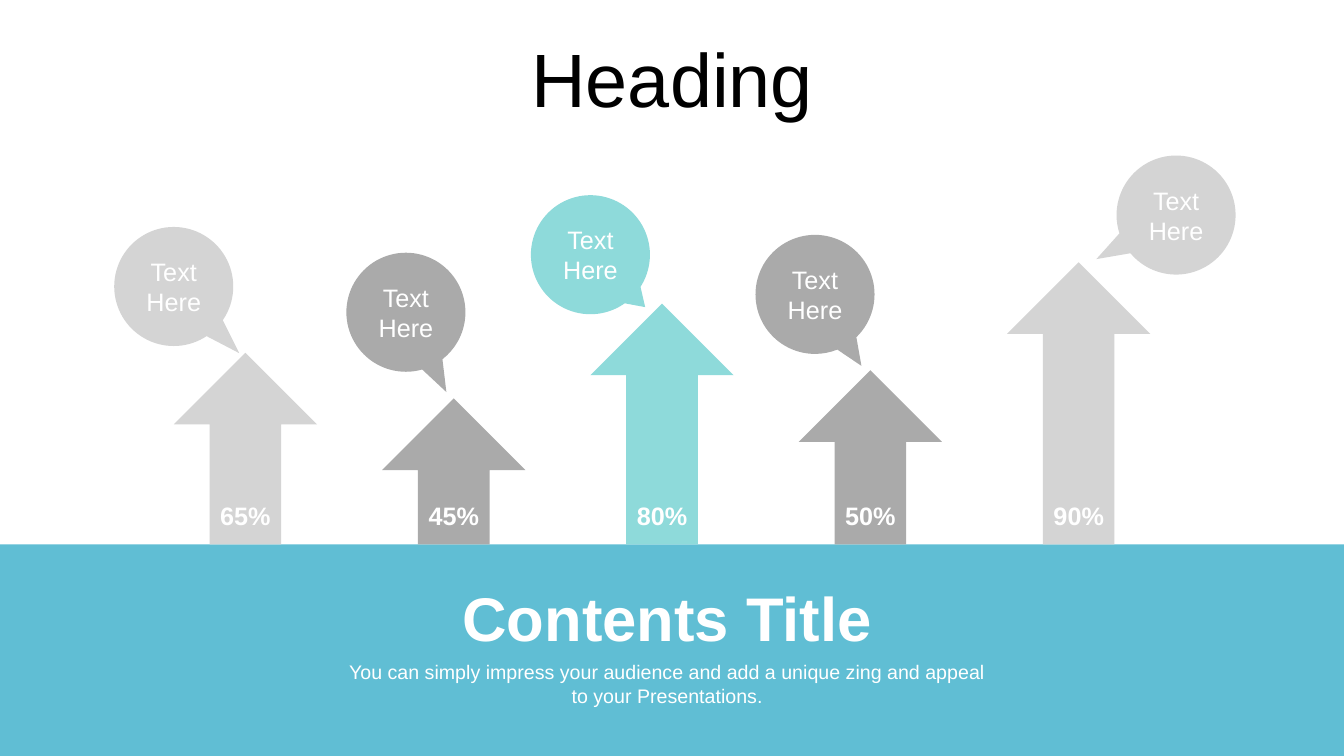
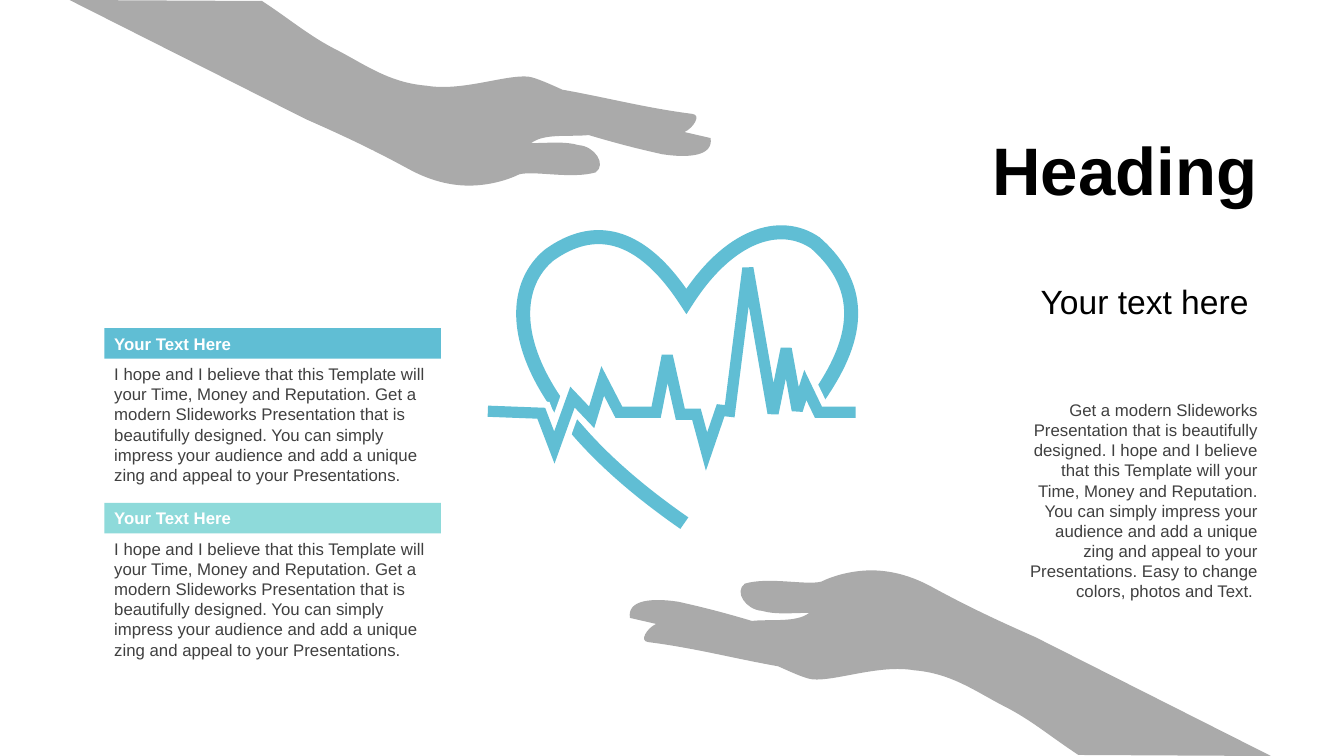
from dataclasses import dataclass

from lxml import etree
from pptx import Presentation
from pptx.dml.color import RGBColor
from pptx.enum.shapes import MSO_SHAPE
from pptx.enum.text import MSO_ANCHOR, PP_ALIGN
from pptx.oxml.ns import qn
from pptx.util import Cm, Pt

RECTANGLE = MSO_SHAPE.RECTANGLE
UP_ARROW = MSO_SHAPE.UP_ARROW
CALLOUT = MSO_SHAPE.OVAL_CALLOUT
LEFT, CENTER, RIGHT = PP_ALIGN.LEFT, PP_ALIGN.CENTER, PP_ALIGN.RIGHT
TOP, MIDDLE = MSO_ANCHOR.TOP, MSO_ANCHOR.MIDDLE


@dataclass(frozen=True)
class Theme:
    font: str = "Arial"
    blue: str = "60BED4"
    mint: str = "8EDADA"
    gray: str = "AAAAAA"
    silver: str = "D4D4D4"
    white: str = "FFFFFF"
    black: str = "000000"
    body: str = "404040"
    title_size: float = 54
    side_title_size: float = 48
    band_title_size: float = 44
    subtitle_size: float = 24
    label_size: float = 18
    caption_size: float = 14
    body_size: float = 12


THEME = Theme()
SLIDE_WIDTH, SLIDE_HEIGHT = 33.87, 19.05

# Content of the arrow slide; lengths in cm
BAND_TITLE = "Contents Title"
BAND_TEXT = ("You can simply impress your audience and add a unique zing "
             "and appeal to your Presentations.")
CALLOUT_TEXT = "Text Here"
# value, colour, arrow height, callout left and top, callout tip
ARROWS = [
    ("65%", THEME.silver, 4.83, (2.88, 5.72), (0.55, 0.56)),
    ("45%", THEME.gray, 3.68, (8.73, 6.37), (0.34, 0.67)),
    ("80%", THEME.mint, 6.07, (13.38, 4.92), (0.46, 0.44)),
    ("50%", THEME.gray, 4.39, (19.04, 5.92), (0.39, 0.6)),
    ("90%", THEME.silver, 7.11, (28.14, 3.92), (-0.67, 0.37)),
]

# Content of the heart slide
CARD_TITLE = "Your Text Here"
CARD_TEXT = ("I hope and I believe that this Template will your Time, Money and "
             "Reputation. Get a modern Slideworks Presentation that is "
             "beautifully designed. You can simply impress your audience and "
             "add a unique zing and appeal to your Presentations.")
CARD_COLORS = [THEME.blue, THEME.mint]
SIDE_TEXT = ("Get a modern Slideworks Presentation that is beautifully designed. "
             "I hope and I believe that this Template will your Time, Money and "
             "Reputation. You can simply impress your audience and add a unique "
             "zing and appeal to your Presentations. Easy to change colors, "
             "photos and Text. ")

# Outlines on a fine grid: two numbers are a line end, six a Bézier curve
GRID = 0.0254
GRID_WIDTH, GRID_HEIGHT = 1330, 750
CURVE_STEPS = 16
HEART = [
    (679, 519),
    (506, 399, 495, 294, 545, 253),
    (588, 222, 635, 228, 681, 299),
    (723, 233, 774, 217, 809, 241),
    (869, 294, 843, 353, 804, 405),
]
PULSE = [
    (484, 408), (537, 410), (550, 444), (568, 394), (587, 414), (598, 378),
    (614, 409), (651, 409), (662, 353), (675, 411), (691, 411), (701, 448),
    (715, 407), (724, 408), (742, 266), (767, 410), (780, 346), (791, 407),
    (799, 382), (812, 409), (849, 409),
]
HAND = [
    (859, 566),
    (878, 565, 900, 569, 924, 582),
    (957, 600, 984, 613, 1027, 632),
    (1261, 750),
    (1070, 749),
    (1041, 730, 1023, 714, 995, 700),
    (968, 686, 944, 668, 907, 665),
    (872, 659, 829, 676, 806, 674),
    (798, 673, 781, 665, 772, 661),
    (727, 653, 690, 643, 643, 637),
    (634, 636, 642, 623, 651, 619),
    (625, 613),
    (622, 595, 647, 593, 673, 597),
    (700, 603, 719, 608, 746, 616),
    (765, 614, 790, 618, 803, 608),
    (787, 608, 769, 610, 756, 606),
    (740, 605, 728, 587, 739, 579),
    (763, 572, 800, 581, 815, 577),
    (825, 572, 841, 567, 859, 566),
]


# Text and shapes
def write(shape, text, size, color, bold=False, align=LEFT, anchor=TOP,
          insets=(0.25, 0.25)):
    frame = shape.text_frame
    frame.word_wrap = True
    frame.vertical_anchor = anchor
    frame.margin_left, frame.margin_right = (Cm(inset) for inset in insets)
    frame.margin_top = frame.margin_bottom = Cm(0.13)
    paragraph = frame.paragraphs[0]
    paragraph.alignment = align
    run = paragraph.add_run()
    run.text = text
    run.font.name = THEME.font
    run.font.size = Pt(size)
    run.font.bold = bold
    run.font.color.rgb = RGBColor.from_string(color)
    return paragraph


def add_text(slide, box, text, size, color, **style):
    shape = slide.shapes.add_textbox(*(Cm(length) for length in box))
    return write(shape, text, size, color, **style)


def paint(shape, color):
    shape.shadow.inherit = False
    shape.fill.solid()
    shape.fill.fore_color.rgb = RGBColor.from_string(color)
    shape.line.fill.background()


def add_filled(slide, kind, box, color):
    shape = slide.shapes.add_shape(kind, *(Cm(length) for length in box))
    paint(shape, color)
    return shape


# Outlines
def curve_points(start, curve):
    """Sample a cubic curve, to find how far it reaches."""
    controls = [start, curve[:2], curve[2:4], curve[4:]]
    points = []
    for step in range(1, CURVE_STEPS + 1):
        t = step / CURVE_STEPS
        weights = ((1 - t) ** 3, 3 * t * (1 - t) ** 2, 3 * t ** 2 * (1 - t), t ** 3)
        points.append(tuple(
            sum(weight * control[axis] for weight, control in zip(weights, controls))
            for axis in (0, 1)))
    return points


def add_outline(slide, segments, close):
    """Build a freeform, then merge the samples of each curve into one Bézier."""
    parts = [segments[:1]]
    for before, segment in zip(segments, segments[1:]):
        is_curve = len(segment) == 6
        parts.append(curve_points(before[-2:], segment) if is_curve else [segment])
    start, *rest = [(Cm(x * GRID), Cm(y * GRID)) for part in parts for x, y in part]
    builder = slide.shapes.build_freeform(*start)
    builder.add_line_segments(rest, close=close)
    shape = builder.convert_to_shape()

    lines = iter(list(shape._element.iter(qn("a:lnTo"))))
    for segment, part in zip(segments[1:], parts[1:]):
        first, *others = [next(lines) for _ in part]
        if not others:
            continue
        for line in others:
            line.getparent().remove(line)
        curve = etree.Element(qn("a:cubicBezTo"))
        for x, y in zip(segment[::2], segment[1::2]):
            point = etree.SubElement(curve, qn("a:pt"))
            point.set("x", str(Cm(x * GRID) - shape.left))
            point.set("y", str(Cm(y * GRID) - shape.top))
        first.getparent().replace(first, curve)
    return shape


def add_stroke(slide, segments, color, width):
    shape = add_outline(slide, segments, close=False)
    shape.shadow.inherit = False
    shape.fill.background()
    shape.line.color.rgb = RGBColor.from_string(color)
    shape.line.width = Pt(width)
    line = shape._element.spPr.find(qn("a:ln"))
    etree.SubElement(line, qn("a:miter")).set("lim", "800000")


def half_turn(segments):
    size = (GRID_WIDTH, GRID_HEIGHT)
    return [tuple(size[index % 2] - value for index, value in enumerate(segment))
            for segment in segments]


# Slides
def build_arrow_slide(slide):
    title = add_text(slide, (0.86, 1.09, 32.16, 2.01), "Heading",
                     THEME.title_size, THEME.black, align=CENTER, anchor=MIDDLE)
    title.line_spacing = 0.9
    title.space_before = Pt(10)

    band_top = 13.72
    add_filled(slide, RECTANGLE,
               (0, band_top, SLIDE_WIDTH, SLIDE_HEIGHT - band_top), THEME.blue)
    band_style = dict(align=CENTER, insets=(0, 0.2))
    add_text(slide, (11.46, 14.48, 10.92, 2.13), BAND_TITLE,
             THEME.band_title_size, THEME.white, bold=True, **band_style)
    add_text(slide, (8.56, 16.51, 16.71, 1.45), BAND_TEXT,
             THEME.caption_size, THEME.white, **band_style)

    first_left, pitch, arrow_width = 4.38, 5.25, 3.61
    label_width, label_top, label_height = 1.96, 12.47, 1.02
    diameter = 3
    for index, (value, color, height, corner, tip) in enumerate(ARROWS):
        left = first_left + index * pitch
        add_filled(slide, UP_ARROW,
                   (left, band_top - height, arrow_width, height), color)
        callout = add_filled(slide, CALLOUT, (*corner, diameter, diameter), color)
        callout.adjustments[0], callout.adjustments[1] = tip
        write(callout, CALLOUT_TEXT, THEME.label_size, THEME.white,
              align=CENTER, anchor=MIDDLE)
        label_left = left + (arrow_width - label_width) / 2
        add_text(slide, (label_left, label_top, label_width, label_height), value,
                 THEME.label_size, THEME.white, bold=True, align=CENTER)


def build_heart_slide(slide):
    # Heart, cut by a white margin around the pulse
    add_stroke(slide, HEART, THEME.blue, 10)
    add_stroke(slide, PULSE, THEME.white, 16.75)
    add_stroke(slide, PULSE, THEME.blue, 8)

    # Cards on the left
    card_left, first_top, card_pitch, header_height = 2.63, 8.27, 4.4, 0.77
    for index, color in enumerate(CARD_COLORS):
        top = first_top + index * card_pitch
        header = add_filled(slide, RECTANGLE,
                            (card_left, top, 8.48, header_height), color)
        write(header, CARD_TITLE, THEME.body_size, THEME.white,
              bold=True, anchor=MIDDLE)
        add_text(slide, (card_left, top + header_height, 8.56, 3.33), CARD_TEXT,
                 THEME.body_size, THEME.body)

    # Lower hand, and the same hand turned by half a circle
    for hand in (HAND, half_turn(HAND)):
        paint(add_outline(slide, hand, close=True), THEME.gray)

    # Text column on the right
    add_text(slide, (22.03, 3.1, 9.91, 2.31), "Heading", THEME.side_title_size,
             THEME.black, bold=True, align=RIGHT, anchor=MIDDLE)
    add_text(slide, (23.59, 6.95, 8.36, 1.27), "Your text here ",
             THEME.subtitle_size, THEME.black, align=RIGHT, anchor=MIDDLE)
    add_text(slide, (25.57, 9.94, 6.38, 5.38), SIDE_TEXT, THEME.body_size,
             THEME.body, align=RIGHT)


def main():
    presentation = Presentation()
    presentation.slide_width = Cm(SLIDE_WIDTH)
    presentation.slide_height = Cm(SLIDE_HEIGHT)
    blank = presentation.slide_layouts[6]
    for build in (build_arrow_slide, build_heart_slide):
        build(presentation.slides.add_slide(blank))
    presentation.save("out.pptx")


if __name__ == "__main__":
    main()
